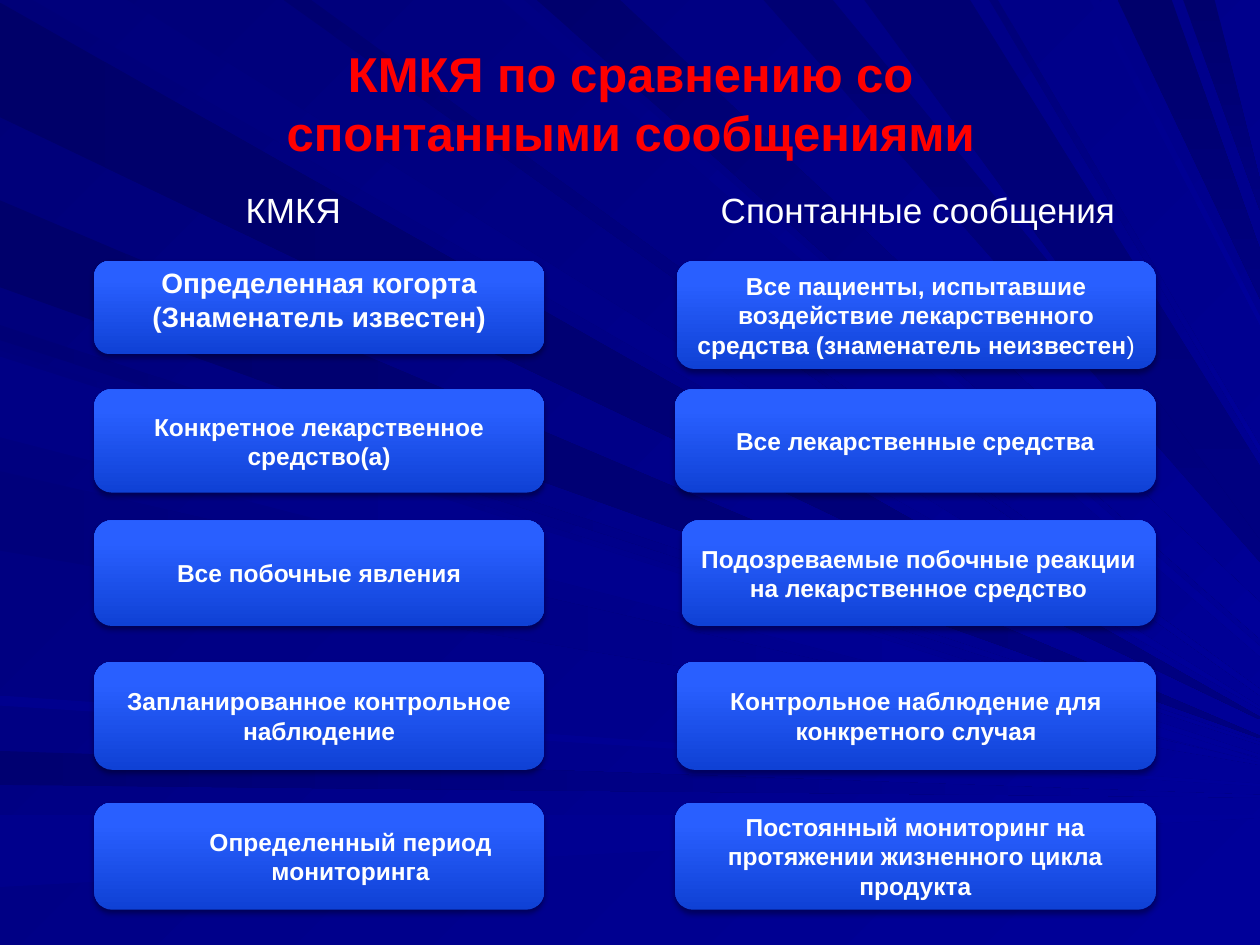
from dataclasses import dataclass
from lxml import etree
from pptx import Presentation
from pptx.dml.color import RGBColor
from pptx.enum.shapes import MSO_SHAPE
from pptx.enum.text import MSO_ANCHOR, MSO_AUTO_SIZE, PP_ALIGN
from pptx.oxml.ns import qn
from pptx.util import Cm, Pt

ROUND = MSO_SHAPE.ROUNDED_RECTANGLE
LEFT, CENTER = PP_ALIGN.LEFT, PP_ALIGN.CENTER
TOP, MIDDLE = MSO_ANCHOR.TOP, MSO_ANCHOR.MIDDLE
FIXED = MSO_AUTO_SIZE.NONE


@dataclass(frozen=True)
class Theme:
    font: str = "Arial"
    white: str = "FFFFFF"
    red: str = "FF0000"
    back: tuple = ("000078", "000099")
    box: tuple = ("0F41D5", "295FFF")
    shade: str = "000000"
    glow: str = "000099"
    deep: str = "000080"
    title: int = 28
    head: int = 20
    large: int = 16
    body: int = 14


THEME = Theme()
PAD = 0.25
EDGE = 23.3
SIDE = 1000
UNIT = Cm(2.54) / 100

LEFT_RAYS = [
    (2, 93, 569, "000069", THEME.deep),
    (596, 623, 631, "000071", THEME.glow),
    (647, 704, 647, "00008C", THEME.glow),
    (258, 270, 589, "000076", THEME.glow),
    (159, 228, 584, "00006B", THEME.deep),
]
TOP_RAYS = [
    (26, 101, 563, "00007B", THEME.glow),
    (398, 416, 521, "000083", THEME.glow),
    (426, 492, 507, "00006D", THEME.glow),
    (606, 661, 446, "000073", THEME.deep),
    (887, 930, 237, "00006B", THEME.deep),
    (939, 964, 167, "00006D", THEME.deep),
    (225, 247, 552, "000070", THEME.glow),
    (686, 770, 428, "000073", THEME.deep),
    (785, 792, 360, "000078", THEME.glow),
    (865, 872, 258, "00008A", THEME.glow),
]
NEAR_RAYS = [
    (278, 342, 599, "00007E", THEME.glow),
    (374, 437, 605, "00007B", THEME.glow),
    (552, 560, 622, "00008E", THEME.glow),
    (283, 347, 603, "000085", THEME.glow),
]

ROWS = [
    (5.26, 2.18, 13.64, "Определенная когорта\n(Знаменатель известен)",
     "Все пациенты, испытавшие воздействие лекарственного "
     "средства (знаменатель неизвестен"),
    (7.85, 2.08, 13.61, "Конкретное лекарственное средство(а)",
     "Все лекарственные средства"),
    (10.49, 2.13, 13.74, "Все побочные явления",
     "Подозреваемые побочные реакции на лекарственное средство"),
    (13.34, 2.18, 13.64, "Запланированное контрольное наблюдение",
     "Контрольное наблюдение для конкретного случая"),
    (16.18, 2.16, 13.61, "Определенный период мониторинга",
     "Постоянный мониторинг на протяжении жизненного цикла продукта"),
]


def paint(fill, colors, angle=0, end=1.0):
    fill.gradient()
    fill.gradient_angle = -angle % 360
    for stop, color, place in zip(fill.gradient_stops, colors, (0.0, end)):
        stop.color.rgb = RGBColor.from_string(color)
        stop.position = place


def write(shape, text, size=THEME.body, color=THEME.white, bold=True,
          align=CENTER, anchor=MIDDLE, lead=PAD, foot=0.13, tail=""):
    frame = shape.text_frame
    frame.auto_size = FIXED
    frame.word_wrap = True
    frame.vertical_anchor = anchor
    frame.margin_left, frame.margin_right = Cm(lead), Cm(PAD)
    frame.margin_top, frame.margin_bottom = Cm(0.13), Cm(foot)
    frame.text = text
    if tail:
        frame.paragraphs[-1].add_run().text = tail
    for para in frame.paragraphs:
        para.alignment = align
        for run in para.runs:
            font = run.font
            font.name, font.size = THEME.font, Pt(size)
            font.bold = bold and run.text != tail
            font.color.rgb = RGBColor.from_string(color)


def ray(slide, points, angle, *colors):
    path = slide.shapes.build_freeform(*points[0], scale=UNIT)
    path.add_line_segments(points[1:], close=True)
    shape = path.convert_to_shape()
    shape.shadow.inherit = False
    shape.line.fill.background()
    paint(shape.fill, colors, angle)


def left_rays(slide, rays):
    for start, stop, end, *colors in rays:
        points = [(0, start), (0, stop), (SIDE, end + 2), (SIDE, end)]
        ray(slide, points, 0, *colors)


def top_rays(slide, rays):
    for start, stop, end, *colors in rays:
        spread = (stop - start) * start // SIDE + 1
        points = [(start, 0), (stop, 0), (SIDE, end - spread), (SIDE, end)]
        ray(slide, points, 90 if THEME.deep in colors else 45, *colors)


def shade(shape):
    shape.shadow.inherit = False
    effects = shape.element.spPr.find(qn("a:effectLst"))
    outer = etree.SubElement(effects, qn("a:outerShdw"), blurRad=str(Pt(3.1)),
                             dist=str(Pt(1.8)), dir="5400000", rotWithShape="0")
    color = etree.SubElement(outer, qn("a:srgbClr"), val=THEME.shade)
    etree.SubElement(color, qn("a:alpha"), val="35000")


def box(slide, left, top, width, height, text, **style):
    shape = slide.shapes.add_shape(ROUND, Cm(left), Cm(top), Cm(width), Cm(height))
    shape.line.fill.background()
    paint(shape.fill, THEME.box, 270, 0.8)
    shade(shape)
    write(shape, text, **style)


def head(slide, left, width, text, lead=PAD):
    shape = slide.shapes.add_textbox(Cm(left), Cm(3.68), Cm(width), Cm(1.11))
    write(shape, text, size=THEME.head, bold=False, align=LEFT, anchor=TOP, lead=lead)


def name(slide, text):
    shape = slide.shapes.title
    shape.left, shape.top = Cm(3.71), Cm(0.74)
    shape.width, shape.height = Cm(18.01), Cm(2.64)
    write(shape, text, size=THEME.title, color=THEME.red, anchor=TOP)
    shape.element.getparent().append(shape.element)


def main():
    deck = Presentation()
    deck.slide_width, deck.slide_height = Cm(25.4), Cm(19.05)
    slide = deck.slides.add_slide(deck.slide_layouts[5])
    paint(slide.background.fill, THEME.back, 45)
    left_rays(slide, LEFT_RAYS)
    top_rays(slide, TOP_RAYS)
    left_rays(slide, NEAR_RAYS)
    first, last = ROWS[0], ROWS[-1]
    for row in ROWS:
        top, tall, left, text, other = row
        style, form = {}, {}
        if row is first:
            style, form = {"size": THEME.large, "foot": 0.45}, {"tail": ")"}
        elif row is last:
            style = {"lead": PAD + 1.27}
        box(slide, 1.9, top, 9.07, 1.88 if row is first else tall, text, **style)
        box(slide, left, top, EDGE - left, tall, other, **form)
    head(slide, 4.7, 3.4, "КМКЯ")
    head(slide, 12.9, 10.39, "Спонтанные сообщения", lead=1.63)
    name(slide, "КМКЯ по сравнению со спонтанными сообщениями")
    deck.save("out.pptx")


if __name__ == "__main__":
    main()
